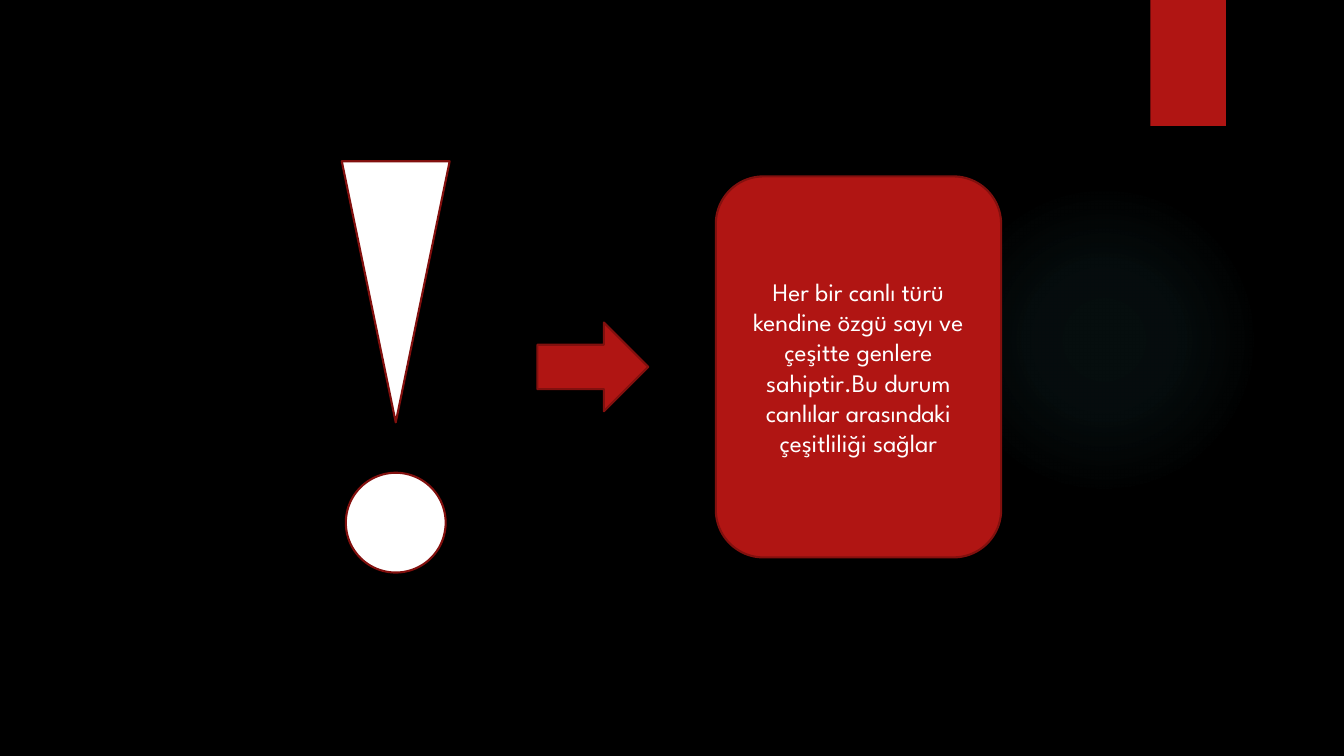
"""Build a slide with an exclamation mark pointing to a card about genes."""
from dataclasses import dataclass

from pptx import Presentation
from pptx.dml.color import RGBColor
from pptx.enum.shapes import MSO_SHAPE as Preset
from pptx.enum.text import MSO_ANCHOR as Anchor, PP_ALIGN as Align
from pptx.oxml import parse_xml
from pptx.oxml.ns import nsdecls, qn
from pptx.util import Inches, Pt


@dataclass(frozen=True)
class Theme:
    background: str = "000000"
    red: str = "B01513"
    outline: str = "82100E"
    white: str = "FFFFFF"
    glow: str = "50B9C1"
    font: str = "League Spartan"
    text_size: int = 18
    line_width: float = 1.5


theme = Theme()
deck = Presentation()
deck.slide_width, deck.slide_height = Inches(13.33), Inches(7.5)
page = deck.slides.add_slide(deck.slide_layouts[6])
page.background.fill.solid()
page.background.fill.fore_color.rgb = RGBColor.from_string(theme.background)


def add_shape(preset, place, color, outline=None):
    shape = page.shapes.add_shape(preset, *[Inches(length) for length in place])
    shape.shadow.inherit = False
    shape.fill.solid()
    shape.fill.fore_color.rgb = RGBColor.from_string(color)
    if outline:
        shape.line.color.rgb = RGBColor.from_string(outline)
        shape.line.width = Pt(theme.line_width)
    else:
        shape.line.fill.background()
    return shape


glow = add_shape(Preset.OVAL, (9.41, 1.83, 3.08, 3.08), theme.glow)
stops = "".join(
    f'<a:gs pos="{position * 1000}"><a:srgbClr val="{theme.glow}">'
    f'<a:alpha val="{opacity * 1000}"/></a:srgbClr></a:gs>'
    for position, opacity in [(0, 7), (36, 6), (69, 0)]
)
gradient = parse_xml(
    f'<a:gradFill {nsdecls("a")}><a:gsLst>{stops}</a:gsLst><a:path path="circle">'
    '<a:fillToRect l="50000" t="50000" r="50000" b="50000"/></a:path></a:gradFill>'
)
properties = glow._element.spPr
properties.replace(properties.find(qn("a:solidFill")), gradient)

add_shape(Preset.RECTANGLE, (11.41, 0, 0.75, 1.25), theme.red)

wedge = add_shape(Preset.ISOSCELES_TRIANGLE, (3.39, 1.6, 1.07, 2.59), theme.white, theme.outline)
wedge.rotation = 180
add_shape(Preset.OVAL, (3.43, 4.69, 0.99, 0.99), theme.white, theme.outline)
add_shape(Preset.RIGHT_ARROW, (5.33, 3.2, 1.1, 0.88), theme.red, theme.outline)

card = add_shape(Preset.ROUNDED_RECTANGLE, (7.1, 1.75, 2.83, 3.78), theme.red, theme.outline)
card.text_frame.word_wrap = True
card.text_frame.vertical_anchor = Anchor.MIDDLE
para = card.text_frame.paragraphs[0]
para.alignment = Align.CENTER
span = para.add_run()
span.text = (
    "Her bir canlı türü kendine özgü sayı ve çeşitte genlere sahiptir."
    "Bu durum canlılar arasındaki çeşitliliği sağlar"
)
for name, value in {"name": theme.font, "size": Pt(theme.text_size)}.items():
    setattr(span.font, name, value)
span.font.color.rgb = RGBColor.from_string(theme.white)

deck.save("out.pptx")
